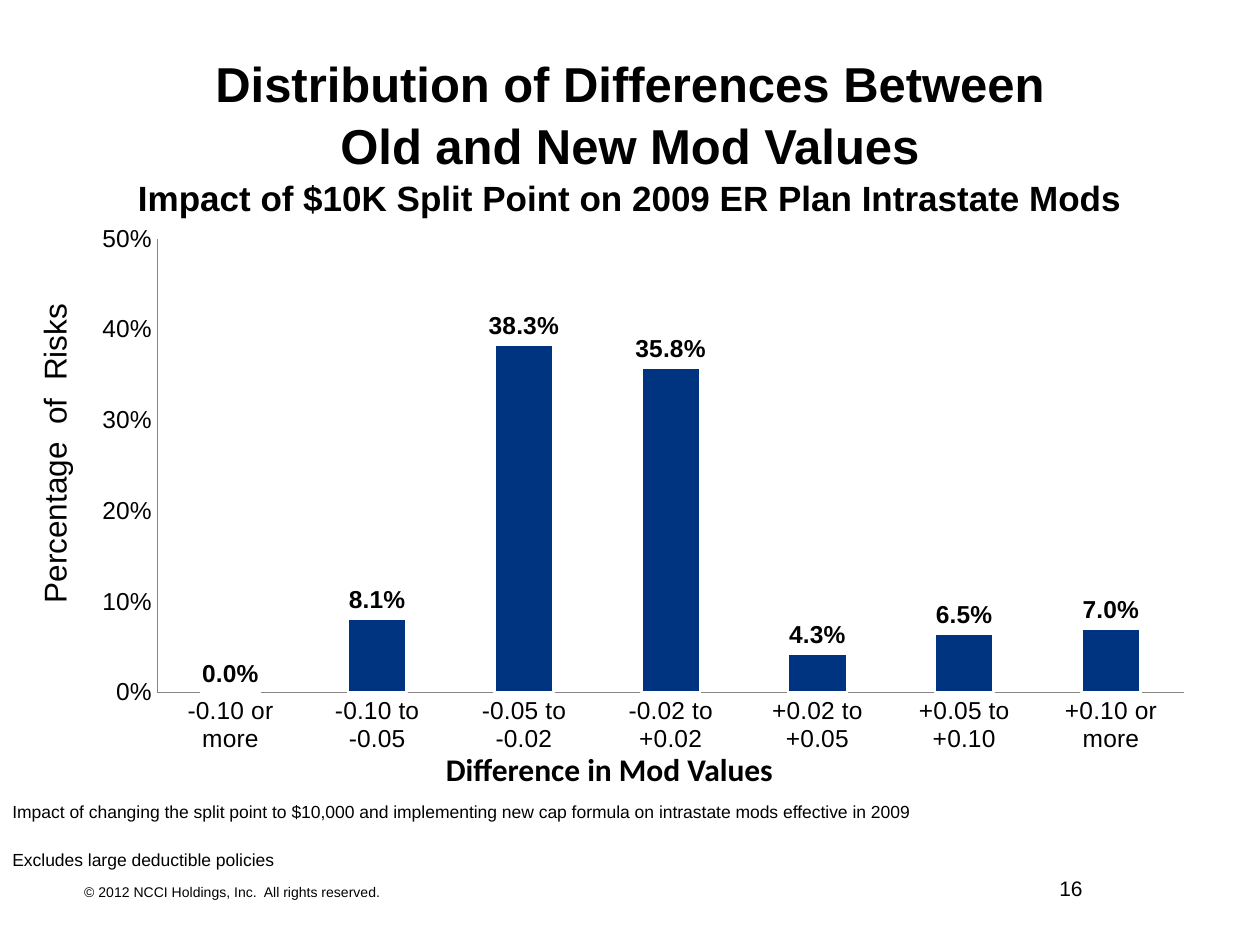
from lxml import etree
from pptx import Presentation
from pptx.chart.data import CategoryChartData
from pptx.dml.color import RGBColor
from pptx.enum.chart import XL_CHART_TYPE as ChartType, XL_LABEL_POSITION as LabelPosition
from pptx.enum.chart import XL_TICK_MARK as TickMark
from pptx.enum.text import PP_ALIGN as Align
from pptx.oxml.ns import qn
from pptx.util import Inches, Pt

BLACK = RGBColor(0, 0, 0)
WHITE = RGBColor(255, 255, 255)
NAVY = RGBColor(0x00, 0x33, 0x80)
GRAY = RGBColor(0x88, 0x88, 0x88)

RISK_SHARES = {
    "-0.10 or more": 0,
    "-0.10 to -0.05": 0.081,
    "-0.05 to -0.02": 0.383,
    "-0.02 to +0.02": 0.358,
    "+0.02 to +0.05": 0.043,
    "+0.05 to +0.10": 0.065,
    "+0.10 or more": 0.07,
}


def style_font(font, size, bold=False, name="Arial"):
    font.name, font.size, font.bold = name, Pt(size), bold
    font.color.rgb = BLACK


def add_text(page, place, text, size, bold=False, name="Arial",
             align=Align.LEFT, spacing=1.0, wrap=True):
    box = page.shapes.add_textbox(*map(Inches, place))
    frame = box.text_frame
    frame.word_wrap = wrap
    frame.text = text
    para = frame.paragraphs[0]
    para.alignment, para.line_spacing = align, spacing
    for span in para.runs:
        style_font(span.font, size, bold, name)
    return box


def add_title(page, place):
    box = add_text(page, place,
                   "Distribution of Differences Between\vOld and New Mod Values\v"
                   "Impact of $10K Split Point on 2009 ER Plan Intrastate Mods",
                   28, bold=True, align=Align.CENTER, spacing=1.05)
    box.text_frame.margin_top = Inches(0.07)
    box.text_frame.paragraphs[0].runs[-1].font.size = Pt(20)


def fix_plot_area(chart, **fractions):
    """Pin the inner plot area to fractions of the chart box."""
    plot_area = chart._chartSpace.chart.plotArea
    for old in plot_area.findall(qn("c:layout")):
        plot_area.remove(old)
    layout = etree.Element(qn("c:layout"))
    manual = etree.SubElement(layout, qn("c:manualLayout"))
    settings = {"layoutTarget": "inner", "xMode": "edge", "yMode": "edge", **fractions}
    for tag, value in settings.items():
        etree.SubElement(manual, qn(f"c:{tag}")).set("val", str(value))
    plot_area.insert(0, layout)


def add_risk_chart(page, place):
    data = CategoryChartData(number_format="0.0%")
    data.categories = list(RISK_SHARES)
    data.add_series("Series 1", list(RISK_SHARES.values()))
    chart = page.shapes.add_chart(ChartType.COLUMN_CLUSTERED, *map(Inches, place), data).chart
    chart.has_legend = chart.has_title = False
    style_font(chart.font, 18, name="DejaVu Sans")
    fix_plot_area(chart, x=0.07, y=0.04, w=0.91, h=0.83)

    # Axes
    for axis in (chart.category_axis, chart.value_axis):
        axis.has_major_gridlines = False
        axis.major_tick_mark = axis.minor_tick_mark = TickMark.NONE
        axis.format.line.color.rgb = GRAY
        style_font(axis.tick_labels.font, 14)
    scale = chart.value_axis
    scale.minimum_scale, scale.maximum_scale, scale.major_unit = 0, 0.5, 0.1
    scale.tick_labels.number_format = "0%"
    scale.tick_labels.number_format_is_linked = False

    # Columns and their labels
    plot = chart.plots[0]
    plot.gap_width = 150
    plot.vary_by_categories = False
    columns = plot.series[0]
    columns.format.fill.solid()
    columns.format.fill.fore_color.rgb = NAVY
    columns.format.line.color.rgb = WHITE
    columns.format.line.width = Pt(1.5)
    labels = columns.data_labels
    labels.show_value = True
    labels.position = LabelPosition.OUTSIDE_END
    labels.number_format, labels.number_format_is_linked = "0.0%", False
    style_font(labels.font, 14, bold=True)


def add_axis_titles(page):
    add_text(page, (3.44, 5.9, 3.08, 0.4), "Difference in Mod Values", 18,
             bold=True, name="Calibri")
    risks = add_text(page, (-1.32, 3.4, 3.5, 0.4), "Percentage  of  Risks", 18,
                     align=Align.CENTER)
    risks.rotation = 270


def add_notes_and_footer(page):
    add_text(page, (0, 6.33, 10, 0.25),
             "Impact of changing the split point to $10,000 and implementing "
             "new cap formula on intrastate mods effective in 2009", 10, spacing=0.9)
    add_text(page, (0, 6.69, 2.3, 0.27), "Excludes large deductible policies", 10, wrap=False)
    add_text(page, (0.57, 6.92, 3.07, 0.58),
             "© 2012 NCCI Holdings, Inc.  All rights reserved.", 8, spacing=1.3)
    add_text(page, (7.75, 6.9, 1.5, 0.5), "16", 12, align=Align.CENTER)


def main():
    deck = Presentation()
    deck.slide_width, deck.slide_height = Inches(10), Inches(7.5)
    page = deck.slides.add_slide(deck.slide_layouts[6])
    add_title(page, (0, 0.33, 10, 1.25))
    add_risk_chart(page, (0.62, 1.72, 8.96, 4.34))
    add_axis_titles(page)
    add_notes_and_footer(page)
    deck.save("out.pptx")


if __name__ == "__main__":
    main()
